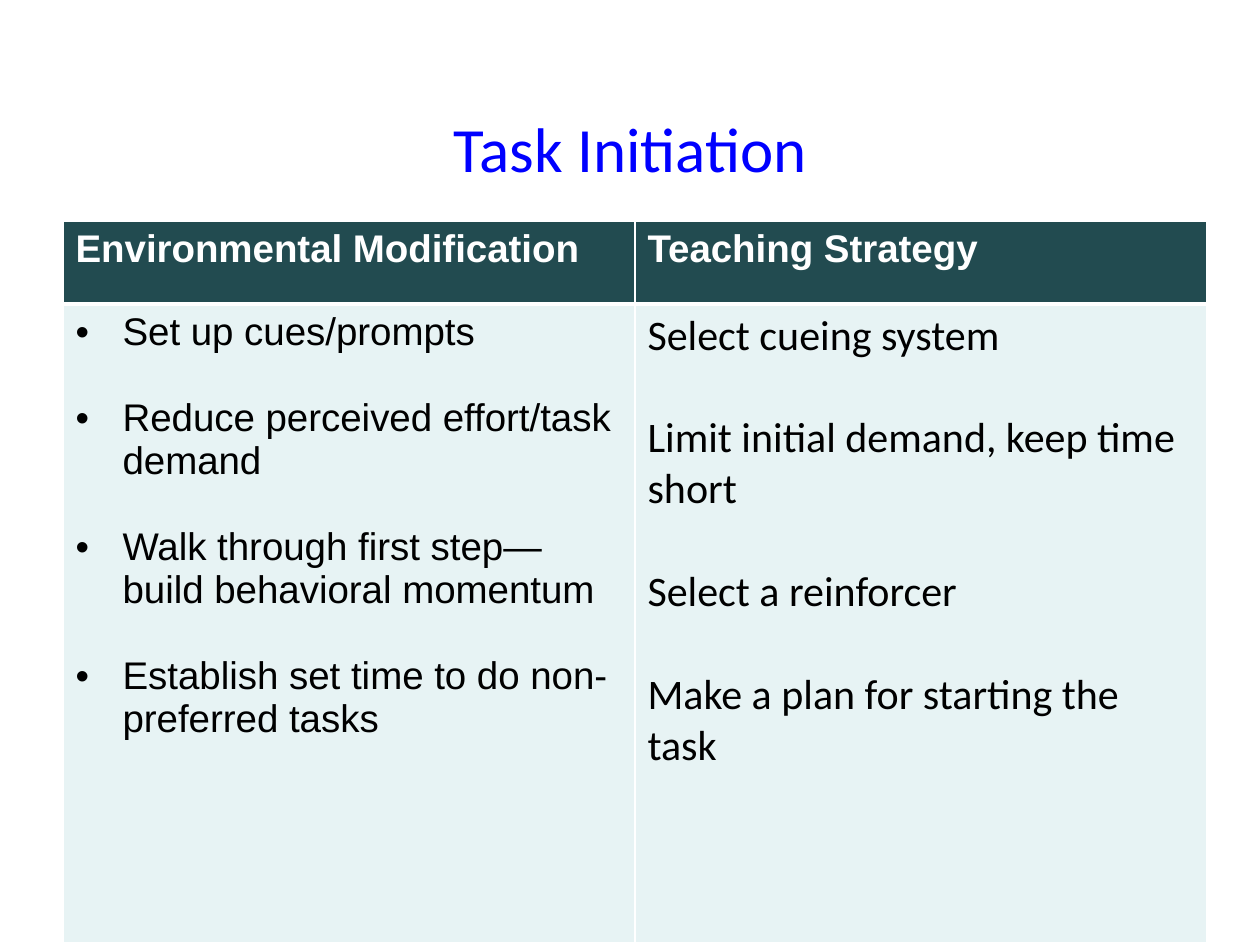
from lxml.etree import SubElement
from pptx import Presentation
from pptx.dml.color import RGBColor
from pptx.enum.text import MSO_ANCHOR, PP_ALIGN
from pptx.oxml.ns import qn
from pptx.util import Emu, Pt

PX_PER_INCH = 126
WHITE = RGBColor(0xFF, 0xFF, 0xFF)
BLACK = RGBColor(0x00, 0x00, 0x00)
BLUE = RGBColor(0x00, 0x00, 0xFF)
DARK_TEAL = RGBColor(0x22, 0x4B, 0x50)
PALE_TEAL = RGBColor(0xE7, 0xF3, 0xF4)

HEADINGS = ["Environmental Modification", "Teaching Strategy"]
MODIFICATIONS = [
    "Set up cues/prompts",
    "Reduce perceived effort/task demand",
    "Walk through first step—build behavioral momentum",
    "Establish set time to do non-preferred tasks",
]
STRATEGIES = [
    "Select cueing system",
    "Limit initial demand, keep time short",
    "Select a reinforcer",
    "Make a plan for starting the task",
]


def px(length):
    return Emu(round(length * 914400 / PX_PER_INCH))


def format_paragraph(paragraph, font_name, size, color, bold=False):
    for run in paragraph.runs:
        font = run.font
        font.name, font.size, font.bold = font_name, Pt(size), bold
        font.color.rgb = color


def add_title(slide, text):
    title = slide.shapes.add_textbox(px(95), px(84), px(1071), px(126))
    text_frame = title.text_frame
    text_frame.word_wrap = True
    text_frame.vertical_anchor = MSO_ANCHOR.MIDDLE
    text_frame.text = text
    paragraph = text_frame.paragraphs[0]
    paragraph.alignment = PP_ALIGN.CENTER
    format_paragraph(paragraph, "Calibri", 36, BLUE)


def set_borders(cell, top, bottom):
    properties = cell._tc.get_or_add_tcPr()
    for side, width in (("L", 1), ("R", 1), ("T", top), ("B", bottom)):
        line = SubElement(properties, qn(f"a:ln{side}"), w=str(Pt(width)))
        fill = SubElement(line, qn("a:solidFill"))
        SubElement(fill, qn("a:srgbClr"), val=str(WHITE))


def style_cell(cell, color, top, bottom):
    # Borders come before the fill in the cell properties
    set_borders(cell, top, bottom)
    cell.fill.solid()
    cell.fill.fore_color.rgb = color
    cell.margin_left = cell.margin_right = Pt(7.2)
    cell.margin_top = cell.margin_bottom = Pt(3.6)


def add_bullet(paragraph):
    properties = paragraph._p.get_or_add_pPr()
    indent = px(47)
    properties.set("marL", str(indent))
    properties.set("indent", str(-indent))
    SubElement(properties, qn("a:buFont"), typeface="Arial")
    SubElement(properties, qn("a:buChar"), char="•")


def fill_list(cell, items, font_name, size, gap, bulleted=False):
    text_frame = cell.text_frame
    text_frame.text = "\n".join(items)
    for index, paragraph in enumerate(text_frame.paragraphs):
        if index:
            paragraph.space_before = Pt(gap)
        if bulleted:
            add_bullet(paragraph)
        format_paragraph(paragraph, font_name, size, BLACK)


def add_strategy_table(slide):
    frame = slide.shapes.add_table(2, 2, px(63), px(221), px(1144), px(722))
    table = frame.table
    table.horz_banding = False
    for row, height in zip(table.rows, (83, 639)):
        row.height = px(height)

    for column, heading in enumerate(HEADINGS):
        table.columns[column].width = px(572)
        header = table.cell(0, column)
        style_cell(header, DARK_TEAL, top=1, bottom=3)
        header.text_frame.text = heading
        format_paragraph(header.text_frame.paragraphs[0], "Arial", 22, WHITE, bold=True)
        style_cell(table.cell(1, column), PALE_TEAL, top=3, bottom=1)

    # Each gap is one line of the column's text
    fill_list(table.cell(1, 0), MODIFICATIONS, "Arial", 22, gap=24.5, bulleted=True)
    fill_list(table.cell(1, 1), STRATEGIES, "Calibri", 24, gap=29.3)


def main():
    presentation = Presentation()
    presentation.slide_width = px(1260)
    presentation.slide_height = px(945)
    slide = presentation.slides.add_slide(presentation.slide_layouts[6])
    add_title(slide, "Task Initiation")
    add_strategy_table(slide)
    presentation.save("out.pptx")


if __name__ == "__main__":
    main()
